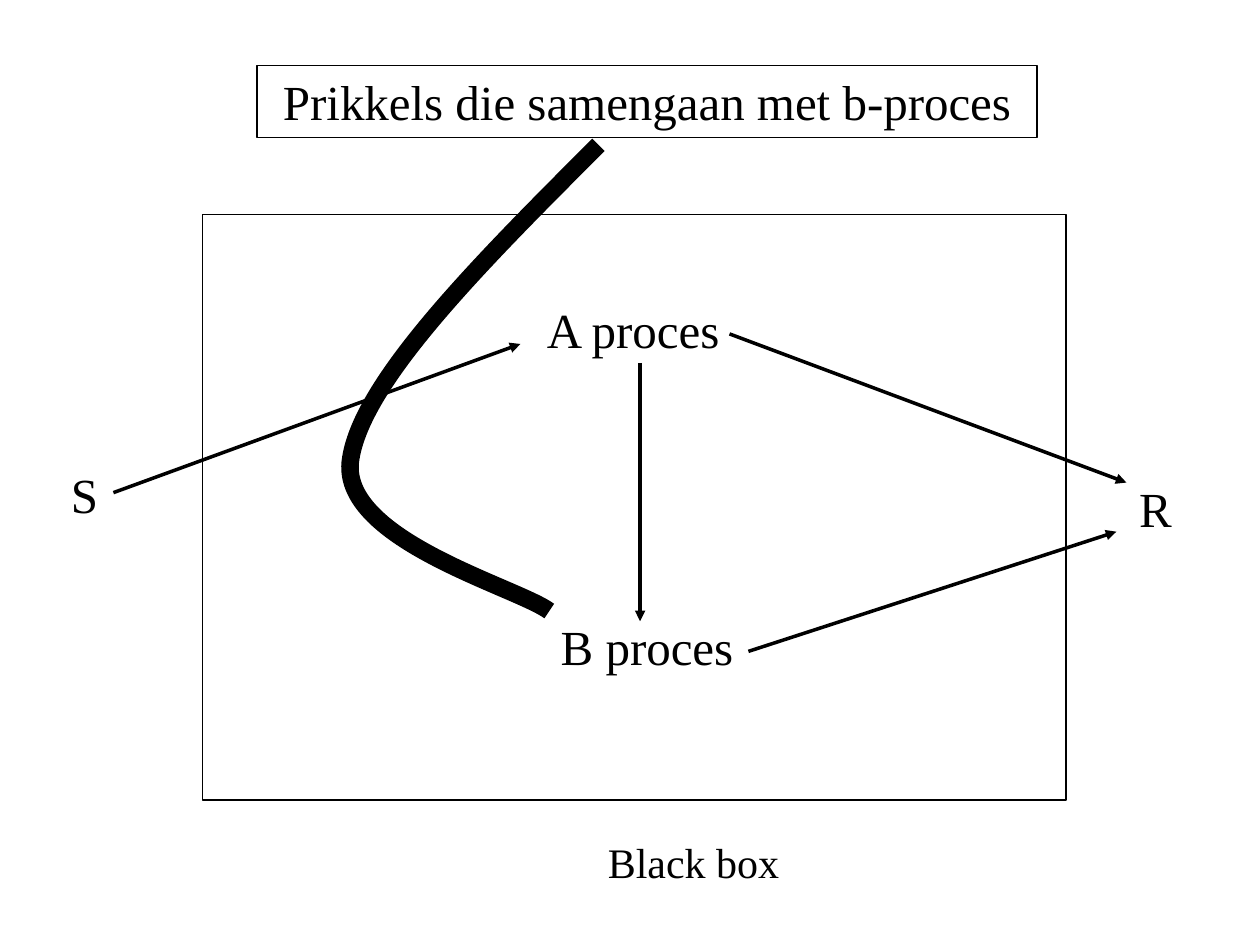
import pptx
import pptx.dml.color
import pptx.enum.shapes
import pptx.enum.text
import pptx.oxml
import pptx.oxml.ns
import pptx.util
from pptx.util import Inches

COLORS = {"ink": "000000"}
FONT = "Times New Roman"

# text, (left, top, width, height), size
LABELS = [
    ("Black box", (4.29, 6.59, 2.43, 0.5), 24),
    ("S", (0.46, 3.64, 0.42, 0.57), 28),
    ("R", (8.94, 3.75, 0.46, 0.57), 28),
    ("A proces", (4.23, 2.33, 1.59, 0.57), 28),
    ("B proces", (3.76, 4.84, 2.75, 0.57), 28),
]

ARROWS = [
    ((0.9, 3.91), (4.13, 2.73)),   # S to A
    ((5.08, 2.88), (5.08, 4.93)),  # A to B
    ((5.79, 2.65), (8.94, 3.83)),  # A to R
    ((5.94, 5.17), (8.86, 4.22)),  # B to R
]

STIMULUS_START = (4.75, 1.15)
STIMULUS_CURVES = [
    [(3.8, 2.1), (2.85, 3.05), (2.78, 3.67)],
    [(2.72, 4.29), (4.1, 4.66), (4.36, 4.85)],
]


def ink():
    return pptx.dml.color.RGBColor.from_string(COLORS["ink"])


def set_line(shape, width):
    shape.line.color.rgb = ink()
    shape.line.width = pptx.util.Pt(width)


def write(shape, text, size):
    paragraph = shape.text_frame.paragraphs[0]
    paragraph.alignment = pptx.enum.text.PP_ALIGN.CENTER
    run = paragraph.add_run()
    run.text = text
    for name, value in {"name": FONT, "size": pptx.util.Pt(size)}.items():
        setattr(run.font, name, value)
    run.font.color.rgb = ink()


def add_frame(slide, box):
    frame = slide.shapes.add_shape(
        pptx.enum.shapes.MSO_SHAPE.RECTANGLE, *map(Inches, box))
    frame.shadow.inherit = False
    frame.fill.background()
    set_line(frame, 0.75)
    return frame


def add_label(slide, text, box, size):
    label = slide.shapes.add_textbox(*map(Inches, box))
    label.text_frame.word_wrap = False
    write(label, text, size)


def add_arrow(slide, start, end):
    arrow = slide.shapes.add_connector(
        pptx.enum.shapes.MSO_CONNECTOR.STRAIGHT, *map(Inches, start + end))
    set_line(arrow, 2)
    head = pptx.oxml.parse_xml(
        f'<a:tailEnd {pptx.oxml.ns.nsdecls("a")} type="triangle"/>')
    arrow.line._get_or_add_ln().append(head)
    arrow._element.spPr.append(
        pptx.oxml.parse_xml(f'<a:effectLst {pptx.oxml.ns.nsdecls("a")}/>'))


def add_curve(slide, start, curves, width):
    """Draw an open path of cubic curves, each given as two handles and an end."""
    builder = slide.shapes.build_freeform(*map(Inches, start))
    points = [tuple(map(Inches, point)) for curve in curves for point in curve]
    builder.add_line_segments(points, close=False)
    curve = builder.convert_to_shape()
    curve.shadow.inherit = False
    curve.fill.background()
    set_line(curve, width)

    # Every three line segments become one cubic segment.
    qn = pptx.oxml.ns.qn
    segments = list(curve._element.iter(qn("a:lnTo")))
    for first in range(0, len(segments), 3):
        cubic = pptx.oxml.parse_xml(
            f'<a:cubicBezTo {pptx.oxml.ns.nsdecls("a")}/>')
        segments[first].addprevious(cubic)
        for segment in segments[first:first + 3]:
            cubic.append(segment.find(qn("a:pt")))
            segment.getparent().remove(segment)


def main():
    deck = pptx.Presentation()
    deck.slide_width, deck.slide_height = Inches(10), Inches(7.5)
    slide = deck.slides.add_slide(deck.slide_layouts[6])

    add_frame(slide, (1.61, 1.7, 6.85, 4.65))
    stimuli = add_frame(slide, (2.04, 0.52, 6.19, 0.57))
    write(stimuli, "Prikkels die samengaan met b-proces", 28)
    for label in LABELS:
        add_label(slide, *label)
    for start, end in ARROWS:
        add_arrow(slide, start, end)
    add_curve(slide, STIMULUS_START, STIMULUS_CURVES, 10)

    deck.save("out.pptx")


if __name__ == "__main__":
    main()
